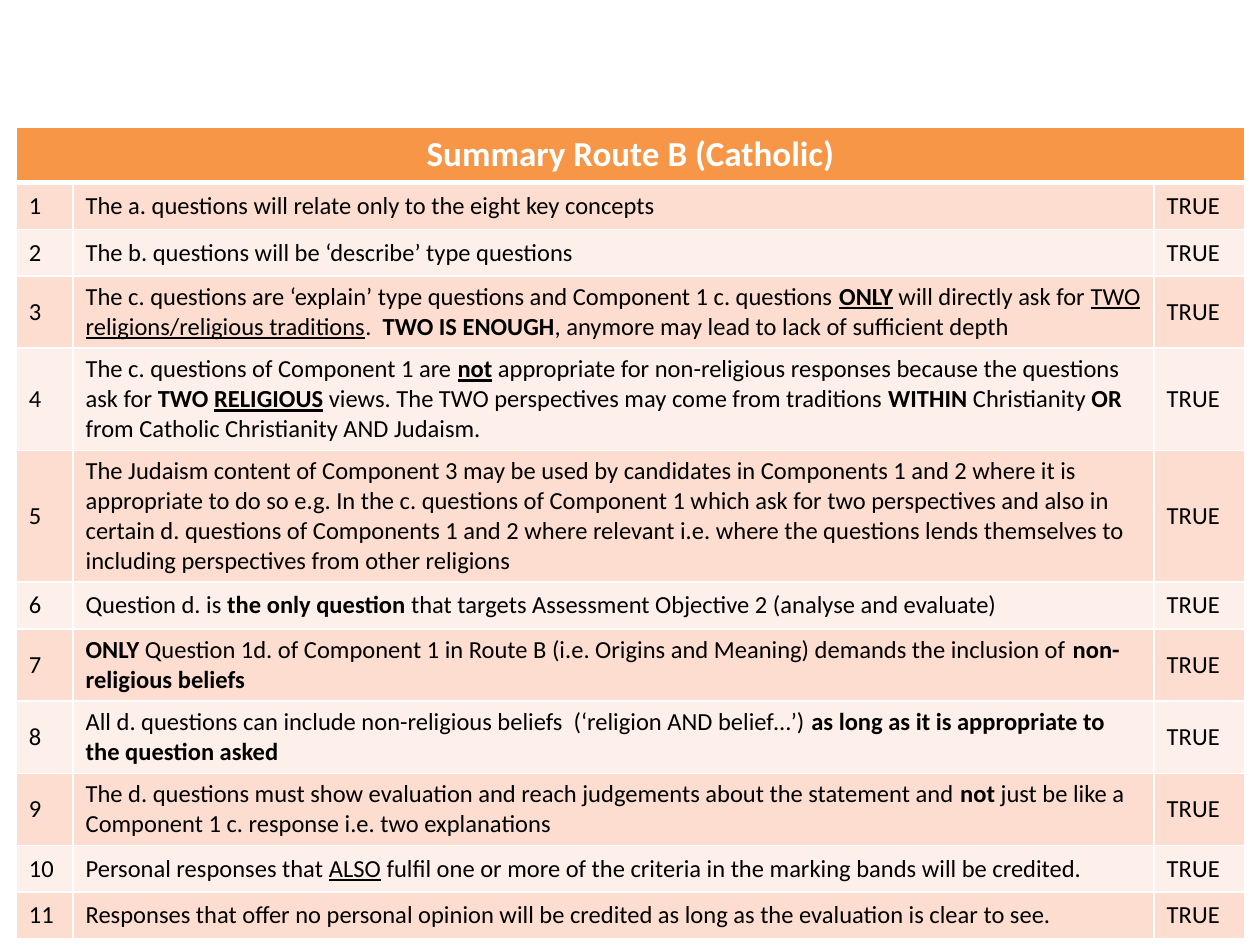
from dataclasses import dataclass

from lxml import etree
from pptx import Presentation
from pptx.dml.color import RGBColor
from pptx.enum.text import MSO_ANCHOR, PP_ALIGN
from pptx.oxml.ns import qn
from pptx.util import Inches, Pt

MIDDLE = MSO_ANCHOR.MIDDLE
LEFT, CENTER = PP_ALIGN.LEFT, PP_ALIGN.CENTER


@dataclass(frozen=True)
class Theme:
    font: str = "Calibri"
    header_size: int = 20
    body_size: int = 14
    header_fill: str = "F79646"
    bands: tuple = ("FCDDCF", "FDEFE9")
    header_text: str = "FFFFFF"
    body_text: str = "000000"
    border: str = "FFFFFF"
    thin: int = 1
    thick: int = 3


THEME = Theme()
TITLE = "Summary Route B (Catholic)"
ANSWER = "TRUE"
COLUMNS = (0.45, 8.58, 0.72)
HEADER_HEIGHT = 0.42

# Each statement: row height, then (text, style) runs; b is bold, u underlined
STATEMENTS = [
    (0.37, [("The a. questions will relate only to the eight key concepts", "")]),
    (0.37, [("The b. questions will be ‘describe’ type questions", "")]),
    (0.56, [("The c. questions are ‘explain’ type questions and Component 1 c. questions ", ""),
            ("ONLY", "bu"), (" will directly ask for ", ""),
            ("TWO religions/religious traditions", "u"), (".  ", ""),
            ("TWO IS ENOUGH", "b"),
            (", anymore may lead to lack of sufficient depth", "")]),
    (0.78, [("The c. questions of Component 1 are ", ""), ("not", "bu"), (" ", "b"),
            ("appropriate for non-religious responses because the questions ask for ", ""),
            ("TWO ", "b"), ("RELIGIOUS", "bu"), (" ", "b"),
            ("views. The TWO perspectives may come from traditions ", ""),
            ("WITHIN ", "b"), ("Christianity ", ""), ("OR", "b"),
            (" from Catholic Christianity AND Judaism.", "")]),
    (0.78, [("The Judaism content of Component 3 may be used by candidates in Components 1 "
             "and 2 where it is appropriate to do so e.g. In the c. questions of Component 1 "
             "which ask for two perspectives and also in certain d. questions of Components 1 "
             "and 2 where relevant i.e. where the questions lends themselves to including "
             "perspectives from other religions", "")]),
    (0.37, [("Question d. is ", ""), ("the only question ", "b"),
            ("that targets Assessment Objective 2 (analyse and evaluate)", "")]),
    (0.56, [("ONLY", "b"),
            (" Question 1d. of Component 1 in Route B (i.e. Origins and Meaning) demands "
             "the inclusion of ", ""),
            ("non-religious beliefs", "b")]),
    (0.56, [("All d. questions can include non-religious beliefs  (‘religion AND belief…’) ", ""),
            ("as long as it is appropriate to the question asked", "b")]),
    (0.56, [("The d. questions must show evaluation and reach judgements about the "
             "statement and ", ""),
            ("not ", "b"),
            ("just be like a Component 1 c. response i.e. two explanations", "")]),
    (0.37, [("Personal responses that ", ""), ("ALSO", "u"),
            (" fulfil one or more of the criteria in the marking bands will be credited.", "")]),
    (0.37, [("Responses that offer no personal opinion will be credited as long as the "
             "evaluation is clear to see.", "")]),
]


def set_borders(cell, top, bottom):
    """Draw the four cell borders, with widths in points for top and bottom."""
    tc_pr = cell._tc.get_or_add_tcPr()
    widths = {"a:lnL": THEME.thin, "a:lnR": THEME.thin, "a:lnT": top, "a:lnB": bottom}
    for tag, width in widths.items():
        ln = etree.SubElement(tc_pr, qn(tag), w=str(Pt(width)))
        fill = etree.SubElement(ln, qn("a:solidFill"))
        etree.SubElement(fill, qn("a:srgbClr"), val=THEME.border)


def style_cell(cell, fill, top=THEME.thin, bottom=THEME.thin):
    set_borders(cell, top, bottom)
    cell.fill.solid()
    cell.fill.fore_color.rgb = RGBColor.from_string(fill)
    cell.vertical_anchor = MIDDLE


def write_runs(cell, runs, size, color, align=LEFT):
    p = cell.text_frame.paragraphs[0]
    p.alignment = align
    for text, style in runs:
        r = p.add_run()
        r.text = text
        r.font.name = THEME.font
        r.font.size = Pt(size)
        r.font.color.rgb = RGBColor.from_string(color)
        r.font.bold = "b" in style
        r.font.underline = "u" in style


def add_summary_table(s, left, top, width, height):
    """Place the header and the numbered statements in the given box."""
    table = s.shapes.add_table(len(STATEMENTS) + 1, len(COLUMNS),
                               left, top, width, height).table
    table.first_row = table.horz_banding = False
    for column, col_width in zip(table.columns, COLUMNS):
        column.width = Inches(col_width)

    # Header across all columns
    table.rows[0].height = Inches(HEADER_HEIGHT)
    for cell in table.rows[0].cells:
        style_cell(cell, THEME.header_fill, bottom=THEME.thick)
    header = table.cell(0, 0)
    header.merge(table.cell(0, len(COLUMNS) - 1))
    write_runs(header, [(TITLE, "b")], THEME.header_size, THEME.header_text, CENTER)

    # Numbered statements in alternating bands
    for number, (row_height, runs) in enumerate(STATEMENTS, 1):
        row = table.rows[number]
        row.height = Inches(row_height)
        band = THEME.bands[(number - 1) % len(THEME.bands)]
        contents = ([(str(number), "")], runs, [(ANSWER, "")])
        for cell, cell_runs in zip(row.cells, contents):
            style_cell(cell, band, top=THEME.thick if number == 1 else THEME.thin)
            write_runs(cell, cell_runs, THEME.body_size, THEME.body_text)


def main():
    prs = Presentation()
    prs.slide_width, prs.slide_height = Inches(10), Inches(7.5)
    s = prs.slides.add_slide(prs.slide_layouts[6])
    add_summary_table(s, Inches(0.13), Inches(1.01), Inches(9.76), Inches(6.37))
    prs.save("out.pptx")


if __name__ == "__main__":
    main()
